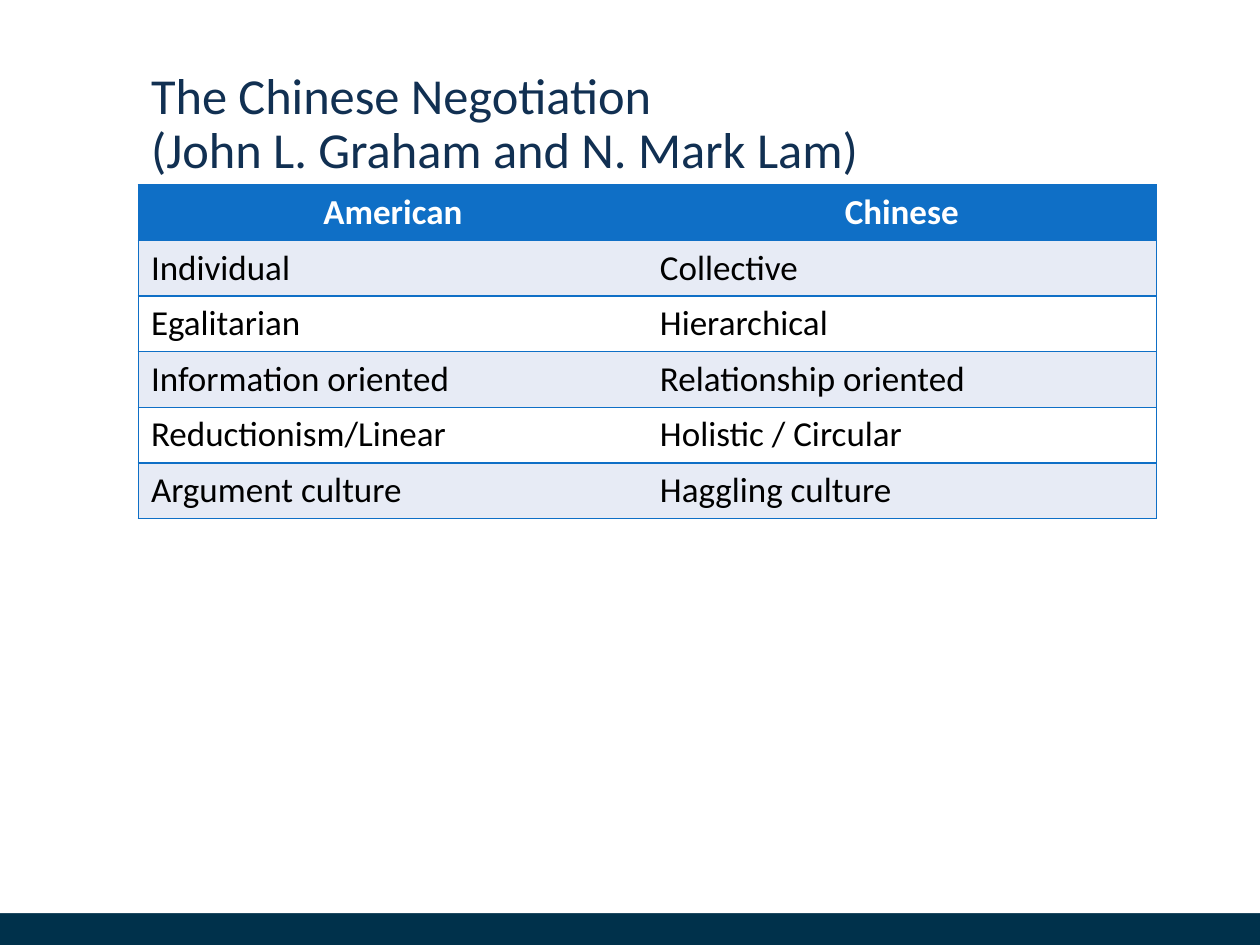
import pptx
import pptx.dml.color
import pptx.enum.shapes
import pptx.enum.text
import pptx.oxml
import pptx.oxml.ns
import pptx.util
from pptx.util import Cm

COLORS = {
    "navy": "00314B",
    "title": "113052",
    "blue": "0F6FC6",
    "band": "E7EBF5",
    "white": "FFFFFF",
    "black": "000000",
}
ROWS = [
    ("American", "Chinese"),
    ("Individual", "Collective"),
    ("Egalitarian", "Hierarchical"),
    ("Information oriented", "Relationship oriented"),
    ("Reductionism/Linear", "Holistic / Circular"),
    ("Argument culture", "Haggling culture"),
]


def rgb(name):
    return pptx.dml.color.RGBColor.from_string(COLORS[name])


class Deck:
    """Holds the style and the current slide."""

    font = "Calibri"
    title_size = 28.8
    cell_size = 20

    def __init__(self, width, height):
        self.prs = pptx.Presentation()
        self.prs.slide_width, self.prs.slide_height = Cm(width), Cm(height)
        self.s = self.prs.slides.add_slide(self.prs.slide_layouts[5])

    def run(self, p, text, size, color, bold=False):
        r = p.add_run()
        r.text = text
        r.font.name = self.font
        r.font.size = pptx.util.Pt(size)
        r.font.bold = bold
        r.font.color.rgb = rgb(color)

    def bar(self, x, y, w, h, color):
        sp = self.s.shapes.add_shape(
            pptx.enum.shapes.MSO_SHAPE.RECTANGLE, Cm(x), Cm(y), Cm(w), Cm(h))
        sp.shadow.inherit = False
        sp.fill.solid()
        sp.fill.fore_color.rgb = rgb(color)
        sp.line.fill.background()

    def title(self, x, y, w, h, lines):
        sp = self.s.shapes.title
        sp.left, sp.top, sp.width, sp.height = Cm(x), Cm(y), Cm(w), Cm(h)
        tf = sp.text_frame
        tf.word_wrap = True
        tf.auto_size = pptx.enum.text.MSO_AUTO_SIZE.NONE
        tf.vertical_anchor = pptx.enum.text.MSO_ANCHOR.TOP
        p = tf.paragraphs[0]
        p.alignment = pptx.enum.text.PP_ALIGN.LEFT
        p.line_spacing = 0.9
        for i, line in enumerate(lines):
            if i:
                p.add_line_break()
            self.run(p, line, self.title_size, "title")

    def borders(self, cell, drawn, color):
        """Draw 1 pt lines on the sides in drawn and clear the others."""
        tc_pr = cell._tc.get_or_add_tcPr()
        ns = pptx.oxml.ns.nsdecls("a")
        solid = f'<a:solidFill><a:srgbClr val="{COLORS[color]}"/></a:solidFill>'
        for side in "LRTB":
            fill = solid if side in drawn else "<a:noFill/>"
            tc_pr.append(pptx.oxml.parse_xml(
                f'<a:ln{side} {ns} w="12700">{fill}</a:ln{side}>'))

    def table(self, x, y, w, row_height, rows):
        n_cols = len(rows[0])
        tbl = self.s.shapes.add_table(
            len(rows), n_cols, Cm(x), Cm(y), Cm(w),
            Cm(row_height * len(rows))).table
        for i, row in enumerate(rows):
            tbl.rows[i].height = Cm(row_height)
            header = i == 0
            fill = "blue" if header else "band" if i % 2 else "white"
            for j, text in enumerate(row):
                cell = tbl.cell(i, j)
                sides = "TB" + "L" * (j == 0) + "R" * (j == n_cols - 1)
                self.borders(cell, sides, "blue")
                cell.fill.solid()
                cell.fill.fore_color.rgb = rgb(fill)
                p = cell.text_frame.paragraphs[0]
                if header:
                    p.alignment = pptx.enum.text.PP_ALIGN.CENTER
                self.run(p, text, self.cell_size,
                         "white" if header else "black", header)


def main():
    deck = Deck(25.4, 19.05)
    deck.bar(0, 18.29, 25.4, 0.76, "navy")
    deck.bar(0, 18.29, 25.4, 0.12, "white")
    deck.title(2.79, 1.3, 19.81, 2.08,
               ["The Chinese Negotiation", "(John L. Graham and N. Mark Lam)"])
    deck.table(2.79, 3.73, 20.52, 1.12, ROWS)
    deck.prs.save("out.pptx")


if __name__ == "__main__":
    main()
